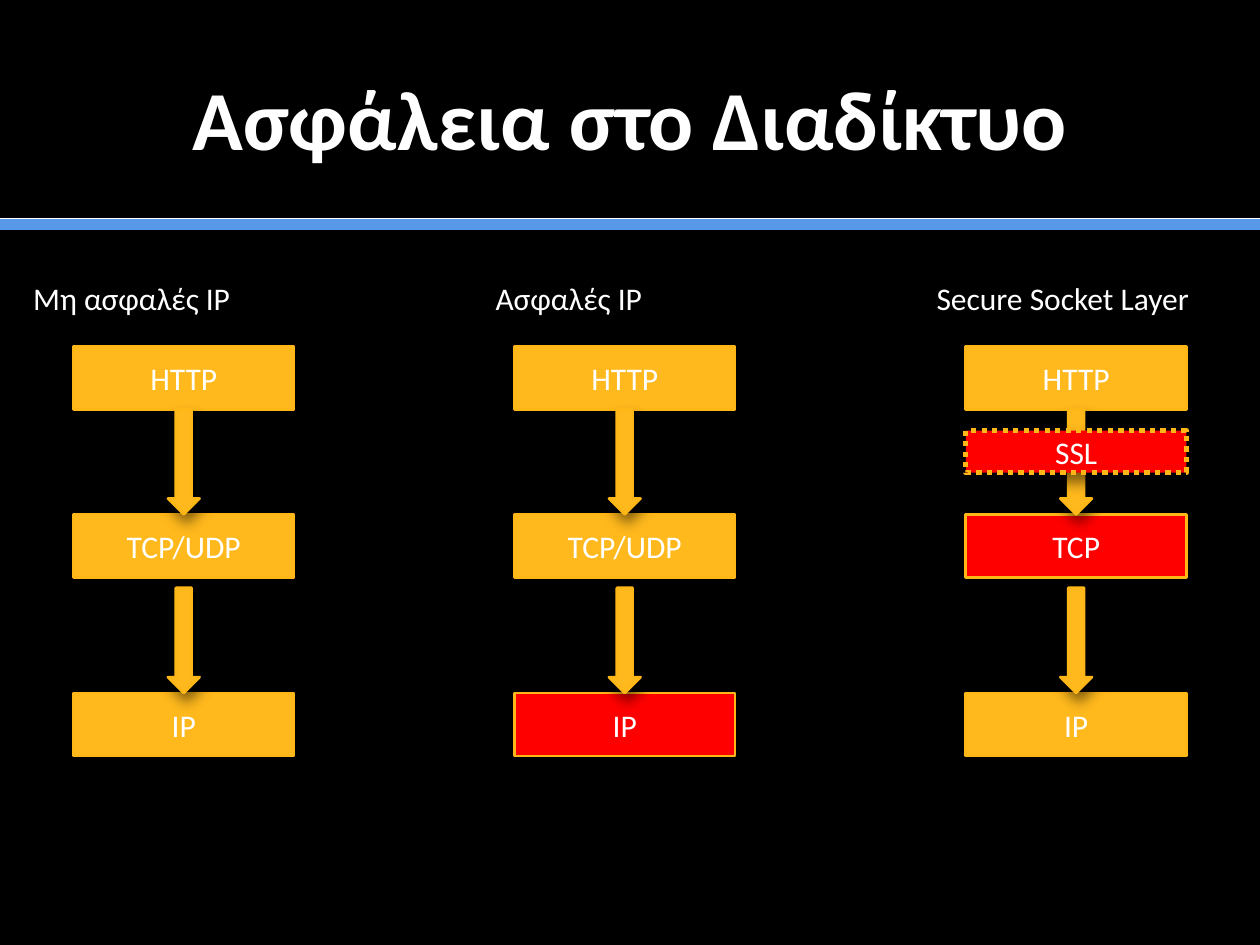
from dataclasses import dataclass

from pptx import Presentation
from pptx.dml.color import RGBColor
from pptx.enum import dml, shapes, text
from pptx.oxml import parse_xml
from pptx.oxml.ns import nsdecls, qn
from pptx.util import Cm, Pt

# Content: heading, heading left, stack left, layers, secured layer (cm)
TITLE = "Ασφάλεια στο Διαδίκτυο"
STACKS = [
    ("Μη ασφαλές IP", 0.42, 1.48, ("HTTP", "TCP/UDP", "IP"), None),
    ("Aσφαλές IP", 9.74, 10.37, ("HTTP", "TCP/UDP", "IP"), "IP"),
    ("Secure Socket Layer", 18.63, 19.47, ("HTTP", "TCP", "IP"), "TCP"),
]
RULES = [(4.52, "5799E8", 7), (4.4, "FFFFFF", 0.5)]  # top, colour, weight


@dataclass(frozen=True)
class Theme:
    font: str = "Calibri"
    title_size: int = 48
    body_size: int = 18
    background: str = "000000"
    ink: str = "FFFFFF"
    layer: str = "FFB91D"
    secured: str = "FF0000"
    outline: str = "FFB717"


THEME = Theme()
SLIDE_WIDTH, SLIDE_HEIGHT = 25.4, 19.05
ROWS = (6.99, 10.37, 13.97)
BOX_WIDTH, BOX_HEIGHT = 4.45, 1.27
ARROW_WIDTH, ARROW_HEIGHT = 0.64, 2.12
SSL_TOP, SSL_HEIGHT = 8.68, 0.85


def color(value):
    return RGBColor.from_string(value)


def write(box, words, size=THEME.body_size, align=text.PP_ALIGN.CENTER, bold=False):
    para = box.text_frame.paragraphs[0]
    para.alignment = align
    span = para.add_run()
    span.text = words
    span.font.name = THEME.font
    span.font.size = Pt(size)
    span.font.bold = bold
    span.font.color.rgb = color(THEME.ink)


def add_block(page, kind, left, top, width, height, fill, weight=1.5):
    block = page.shapes.add_shape(kind, Cm(left), Cm(top), Cm(width), Cm(height))
    block.fill.solid()
    block.fill.fore_color.rgb = color(fill)
    block.line.color.rgb = color(THEME.outline)
    block.line.width = Pt(weight)
    # Soft shadow: 8 pt blur, 5 pt away, at 70 degrees
    block._element.spPr.append(parse_xml(
        f'<a:effectLst {nsdecls("a")}><a:outerShdw blurRad="{Pt(8)}" dist="{Pt(5)}" '
        'dir="4200000" algn="tl" rotWithShape="0"><a:srgbClr val="000000">'
        '<a:alpha val="50000"/></a:srgbClr></a:outerShdw></a:effectLst>'))
    return block


def add_layer(page, words, left, top, height, fill, weight=1.5):
    box = add_block(page, shapes.MSO_SHAPE.RECTANGLE, left, top, BOX_WIDTH, height, fill, weight)
    box.text_frame.vertical_anchor = text.MSO_ANCHOR.MIDDLE
    write(box, words)
    return box


def add_stack(page, heading, heading_left, left, layers, secured):
    for words, top in zip(layers, ROWS):
        fill = THEME.secured if words == secured else THEME.layer
        add_layer(page, words, left, top, BOX_HEIGHT, fill)

    # Each arrow ends at the top of the layer below
    for top in ROWS[1:]:
        add_block(page, shapes.MSO_SHAPE.DOWN_ARROW, left + (BOX_WIDTH - ARROW_WIDTH) / 2,
                  top - ARROW_HEIGHT, ARROW_WIDTH, ARROW_HEIGHT, THEME.layer)

    label = page.shapes.add_textbox(Cm(heading_left), Cm(5.5), Cm(6.35), Cm(1.02))
    label.text_frame.word_wrap = True
    write(label, heading, align=text.PP_ALIGN.LEFT)


def main():
    deck = Presentation()
    deck.slide_width, deck.slide_height = Cm(SLIDE_WIDTH), Cm(SLIDE_HEIGHT)
    page = deck.slides.add_slide(deck.slide_layouts[5])
    page.background.fill.solid()
    page.background.fill.fore_color.rgb = color(THEME.background)

    # Title
    title = page.shapes.title
    title.left, title.top, title.width, title.height = Cm(1.27), Cm(0.76), Cm(22.86), Cm(3.18)
    title.text_frame.vertical_anchor = text.MSO_ANCHOR.MIDDLE
    write(title, TITLE, THEME.title_size, bold=True)

    # Rules under the title
    for top, tint, weight in RULES:
        rule = page.shapes.add_connector(
            shapes.MSO_CONNECTOR.STRAIGHT, Cm(0), Cm(top), Cm(SLIDE_WIDTH), Cm(top))
        rule.line.color.rgb = color(tint)
        rule.line.width = Pt(weight)
        rule._element.spPr.append(rule._element.spPr.makeelement(qn("a:effectLst"), {}))

    # Protocol stacks
    for stack in STACKS:
        add_stack(page, *stack)

    # Extra layer over the first arrow of the last stack
    ssl = add_layer(page, "SSL", STACKS[-1][2], SSL_TOP, SSL_HEIGHT, THEME.secured, 3)
    ssl.line.dash_style = dml.MSO_LINE.ROUND_DOT
    ssl.line._ln.find(qn("a:prstDash")).set("val", "sysDot")

    deck.save("out.pptx")


if __name__ == "__main__":
    main()
